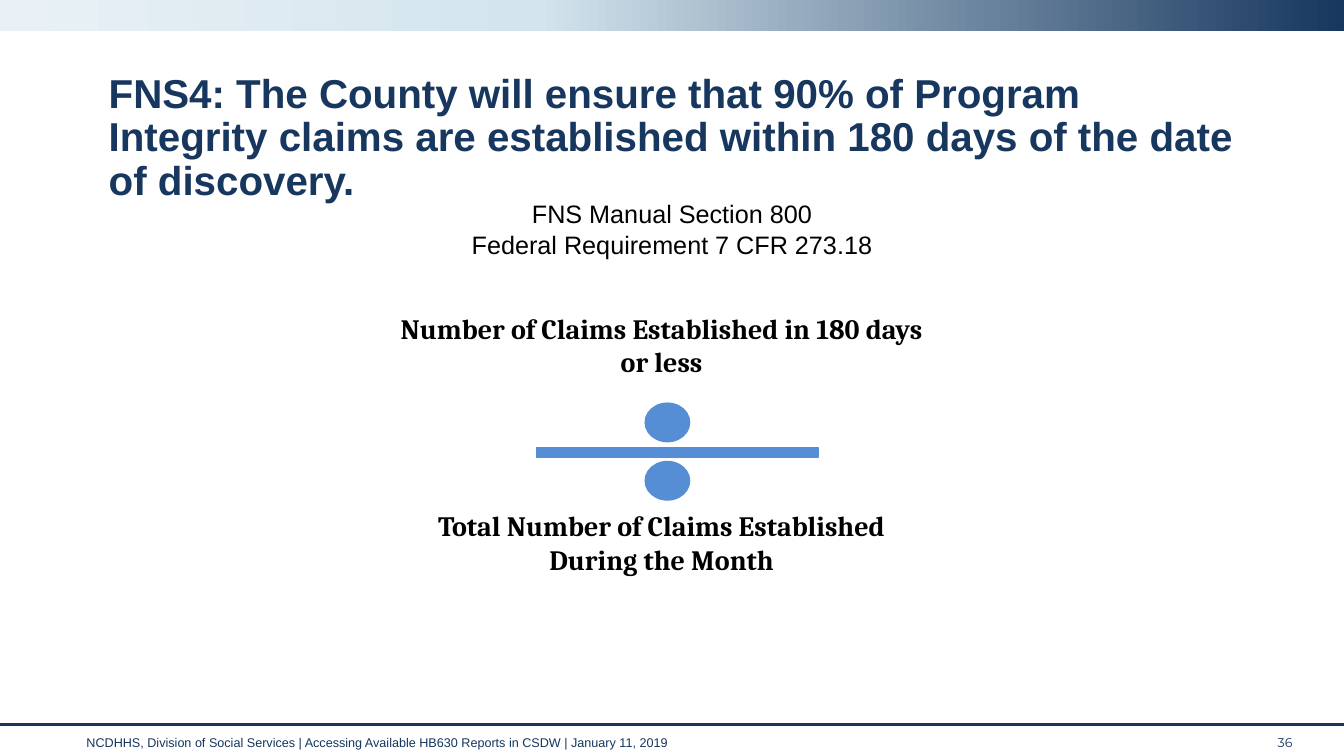
"""Build the FNS4 claims measure slide."""
from lxml import etree
from pptx import Presentation
from pptx import util as u
from pptx.dml.color import RGBColor
from pptx.enum import shapes, text
from pptx.oxml.ns import qn

NAVY = "17375E"
FOOTER_NAVY = "15365E"
BLUE = "558ED5"
BLACK = "000000"
PAGE_WIDTH = 33.87
BAND_STOPS = ((0, "E9F1F6"), (40, "D3E4ED"), (100, NAVY))


def paint(color_format, color):
    """Set a colour from a hex string."""
    color_format.rgb = RGBColor.from_string(color)


def add_text(slide, box, lines, font, size, color, bold=False,
             align=text.PP_ALIGN.LEFT, anchor=text.MSO_ANCHOR.TOP, spacing=1.0):
    """Add a wrapping text box with one paragraph per line."""
    shape = slide.shapes.add_textbox(*map(u.Cm, box))
    frame = shape.text_frame
    frame.word_wrap = True
    frame.vertical_anchor = anchor
    for index, line in enumerate(lines):
        paragraph = frame.add_paragraph() if index else frame.paragraphs[0]
        paragraph.alignment = align
        paragraph.line_spacing = spacing
        run = paragraph.add_run()
        run.text = line
        run.font.name = font
        run.font.size = u.Pt(size)
        run.font.bold = bold
        paint(run.font.color, color)


def add_band(slide):
    """Add the gradient band along the top edge."""
    band = slide.shapes.add_shape(
        shapes.MSO_SHAPE.RECTANGLE, 0, 0, u.Cm(PAGE_WIDTH), u.Cm(0.78))
    band.shadow.inherit = False
    band.line.fill.background()
    band.fill.gradient()
    band.fill.gradient_angle = 0
    stops = band.element.spPr.find(qn("a:gradFill")).find(qn("a:gsLst"))
    for stop in list(stops):
        stops.remove(stop)
    for position, color in BAND_STOPS:
        stop = etree.SubElement(stops, qn("a:gs"), pos=str(position * 1000))
        etree.SubElement(stop, qn("a:srgbClr"), val=color)


def add_rule(slide, top):
    """Add the full-width footer line."""
    rule = slide.shapes.add_connector(
        shapes.MSO_CONNECTOR.STRAIGHT, 0, u.Cm(top), u.Cm(PAGE_WIDTH), u.Cm(top))
    rule.line.width = u.Pt(1.75)
    paint(rule.line.color, NAVY)
    etree.SubElement(rule.element.spPr, qn("a:effectLst"))


def add_division_sign(slide):
    """Add a grouped bar with a dot above and a dot below."""
    group = slide.shapes.add_group_shape()
    oval = shapes.MSO_SHAPE.OVAL
    parts = [(shapes.MSO_SHAPE.RECTANGLE, (13.52, 11.28, 7.1, 0.25))]
    parts += [(oval, (16.26, top, 1.12, 0.97)) for top in (10.16, 11.63)]
    for kind, box in parts:
        shape = group.shapes.add_shape(kind, *map(u.Cm, box))
        shape.shadow.inherit = False
        shape.fill.solid()
        paint(shape.fill.fore_color, BLUE)
        shape.line.width = u.Pt(1)
        paint(shape.line.color, BLUE)


def main():
    """Build and save the slide."""
    presentation = Presentation()
    presentation.slide_width = u.Cm(PAGE_WIDTH)
    presentation.slide_height = u.Cm(19.05)
    slide = presentation.slides.add_slide(presentation.slide_layouts[6])
    center, middle = text.PP_ALIGN.CENTER, text.MSO_ANCHOR.MIDDLE

    add_text(slide, (1.93, 18.34, 29.62, 0.74),
             ["NCDHHS, Division of Social Services | Accessing Available HB630 "
              "Reports in CSDW | January 11, 2019"],
             "Arial", 9, FOOTER_NAVY, anchor=middle)
    add_text(slide, (31.95, 18.34, 1.5, 0.76), ["36"],
             "Montserrat", 9, FOOTER_NAVY, anchor=middle)
    add_band(slide)
    add_rule(slide, 18.26)
    add_text(slide, (2.49, 1.73, 29.06, 1.52),
             ["FNS4: The County will ensure that 90% of Program Integrity claims "
              "are established within 180 days of the date of discovery."],
             "Arial", 28.8, NAVY, bold=True, spacing=0.9)
    add_division_sign(slide)
    terms = ((7.72, "Number of Claims Established in 180 days or less"),
             (12.7, "Total Number of Claims Established During the Month"))
    for top, term in terms:
        add_text(slide, (9.78, top, 13.79, 1.96), [term],
                 "Cambria", 20, BLACK, bold=True, align=center)
    add_text(slide, (10.85, 4.88, 12.17, 1.8),
             ["FNS Manual Section 800", "Federal Requirement 7 CFR 273.18"],
             "Arial", 18, BLACK, align=center)
    presentation.save("out.pptx")


if __name__ == "__main__":
    main()
